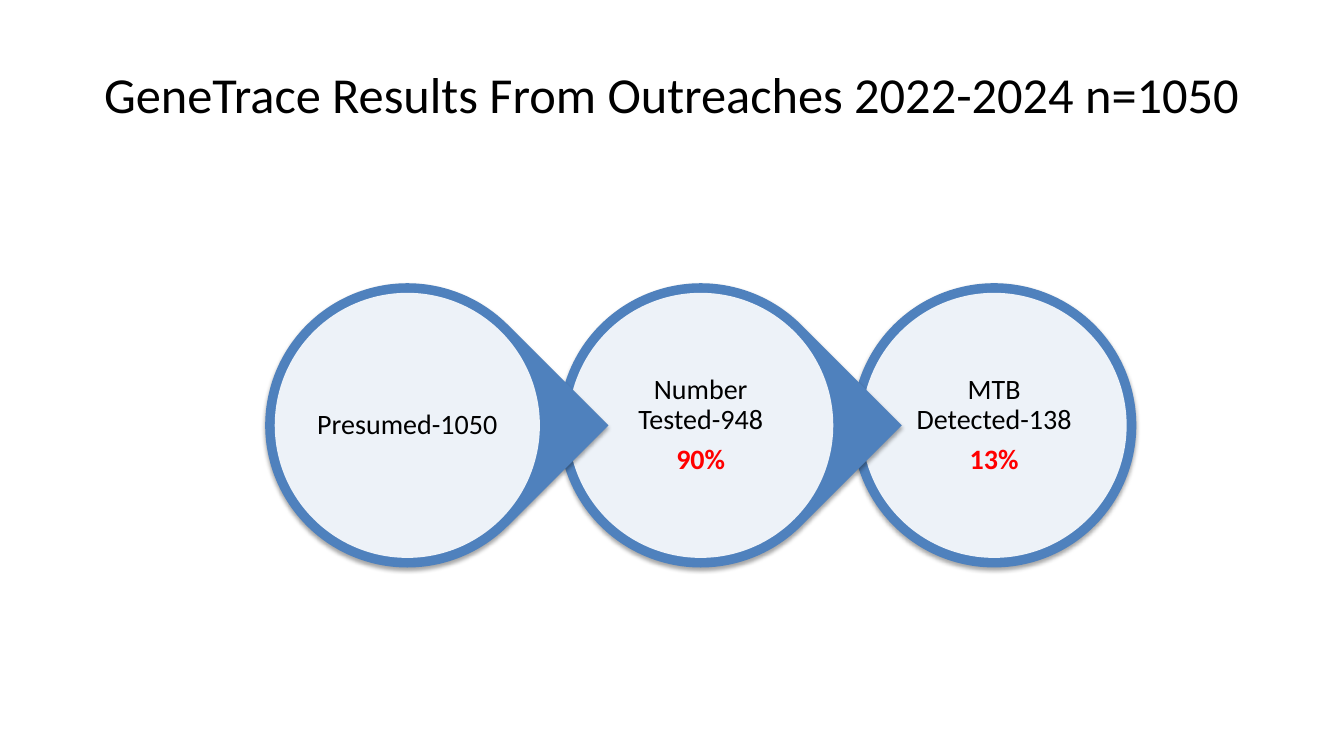
"""Build the slide of outreach test results as three linked circles."""
from lxml import etree
from pptx import Presentation
from pptx.dml.color import RGBColor
from pptx.enum.shapes import MSO_SHAPE as SHAPE
from pptx.enum.text import MSO_ANCHOR as ANCHOR, PP_ALIGN as ALIGN
from pptx.oxml import parse_xml
from pptx.oxml.ns import nsdecls, qn
from pptx.util import Inches, Pt

BLUE = RGBColor(0x4F, 0x81, 0xBD)
WHITE = RGBColor(0xFF, 0xFF, 0xFF)
BLACK = RGBColor(0x00, 0x00, 0x00)
RED = RGBColor(0xFF, 0x00, 0x00)
FONT = "Calibri"

FIRST_X, CENTER_Y, PITCH = 4.04, 4.22, 2.91
RING, DISC, LABEL = 2.82, 2.63, 1.88
STAGES = [
    ["Presumed-1050"],
    ["Number Tested-948", "90%"],
    ["MTB Detected-138", "13%"],
]
SHADOW = (
    f'<a:effectLst {nsdecls("a")}><a:outerShdw blurRad="{Pt(3.1)}" dist="{Pt(1.8)}" '
    'dir="5400000" rotWithShape="0"><a:srgbClr val="000000"><a:alpha val="35000"/>'
    '</a:srgbClr></a:outerShdw></a:effectLst>'
)


def centered(x, size):
    """Return the box of a square centred on x in the row of circles."""
    return Inches(x - size / 2), Inches(CENTER_Y - size / 2), Inches(size), Inches(size)


def add_round(s, kind, x, size, color):
    """Add a borderless, shadowless round shape."""
    sp = s.shapes.add_shape(kind, *centered(x, size))
    sp.shadow.inherit = False
    sp.fill.solid()
    sp.fill.fore_color.rgb = color
    sp.line.fill.background()
    return sp


prs = Presentation()
prs.slide_width, prs.slide_height = Inches(13.33), Inches(7.5)
s = prs.slides.add_slide(prs.slide_layouts[5])

title = s.shapes.title
title.left, title.top = int(prs.slide_width * 0.05), int(prs.slide_height * 0.04)
title.width, title.height = int(prs.slide_width * 0.9), Inches(1.25)
tf = title.text_frame
tf.text = "GeneTrace Results From Outreaches 2022-2024 n=1050"
tf.vertical_anchor = ANCHOR.MIDDLE
p = tf.paragraphs[0]
p.alignment = ALIGN.CENTER
font = p.runs[0].font
font.name, font.size = FONT, Pt(36)
font.color.rgb = BLACK

last = len(STAGES) - 1
for i, lines in reversed(list(enumerate(STAGES))):
    x = FIRST_X + i * PITCH

    ring = add_round(s, SHAPE.OVAL if i == last else SHAPE.TEAR, x, RING, BLUE)
    ring.rotation = 0 if i == last else 45
    sp_pr = ring._element.spPr
    sp_pr.replace(sp_pr.find(qn("a:effectLst")), parse_xml(SHADOW))

    disc = add_round(s, SHAPE.OVAL, x, DISC, WHITE)
    clr = disc._element.spPr.find(qn("a:solidFill"))[0]
    etree.SubElement(clr, qn("a:alpha")).set("val", "90000")

    tf = s.shapes.add_textbox(*centered(x, LABEL)).text_frame
    tf.word_wrap = True
    tf.vertical_anchor = ANCHOR.MIDDLE
    tf.margin_left = tf.margin_right = tf.margin_top = tf.margin_bottom = Inches(0.03)
    tf.text = "\n".join(lines)
    for row, p in enumerate(tf.paragraphs):
        p.alignment = ALIGN.CENTER
        p.line_spacing = 0.9
        p.space_after = Pt(7)
        font = p.runs[0].font
        font.name, font.size, font.bold = FONT, Pt(20), row > 0
        font.color.rgb = RED if row else BLACK

prs.save("out.pptx")
